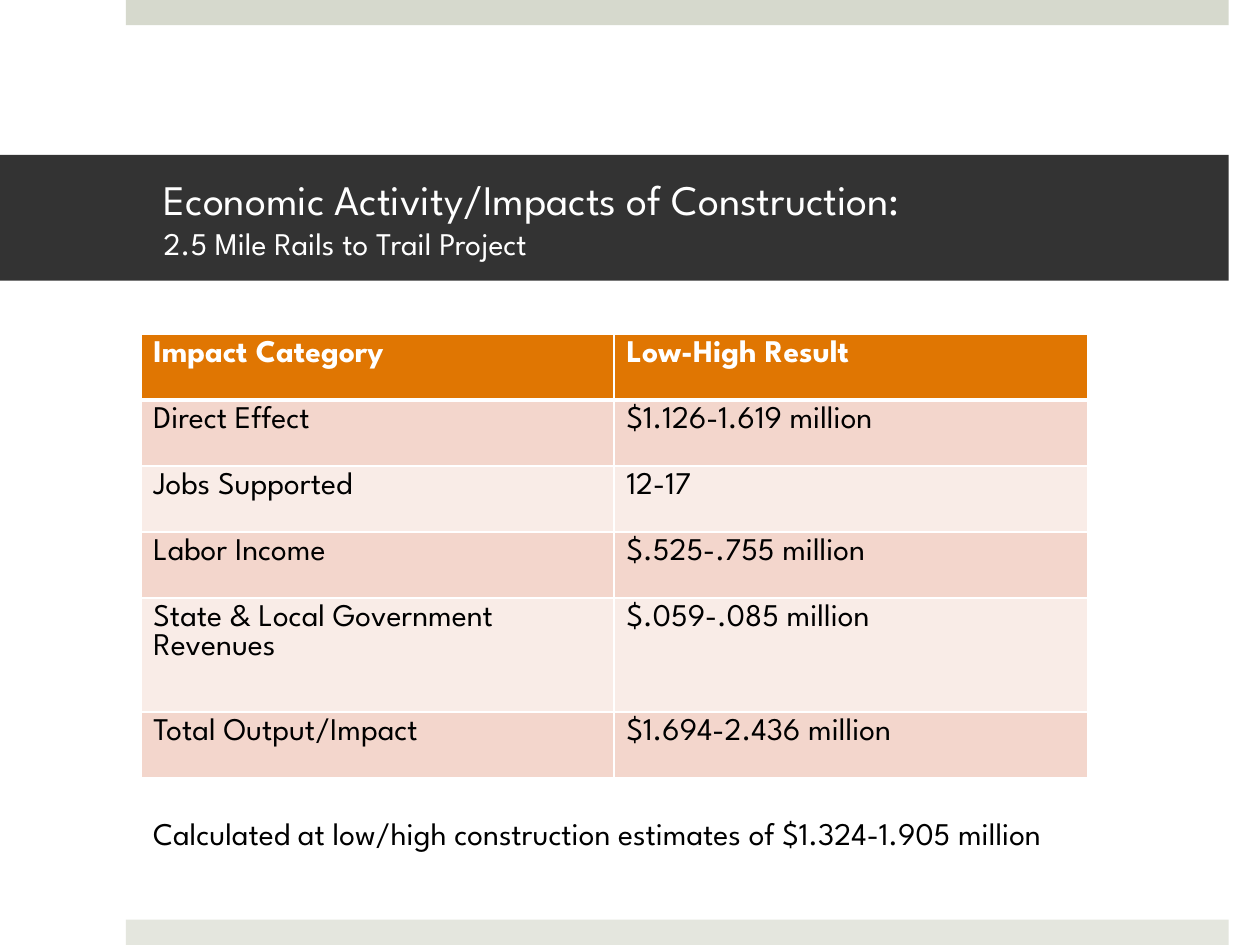
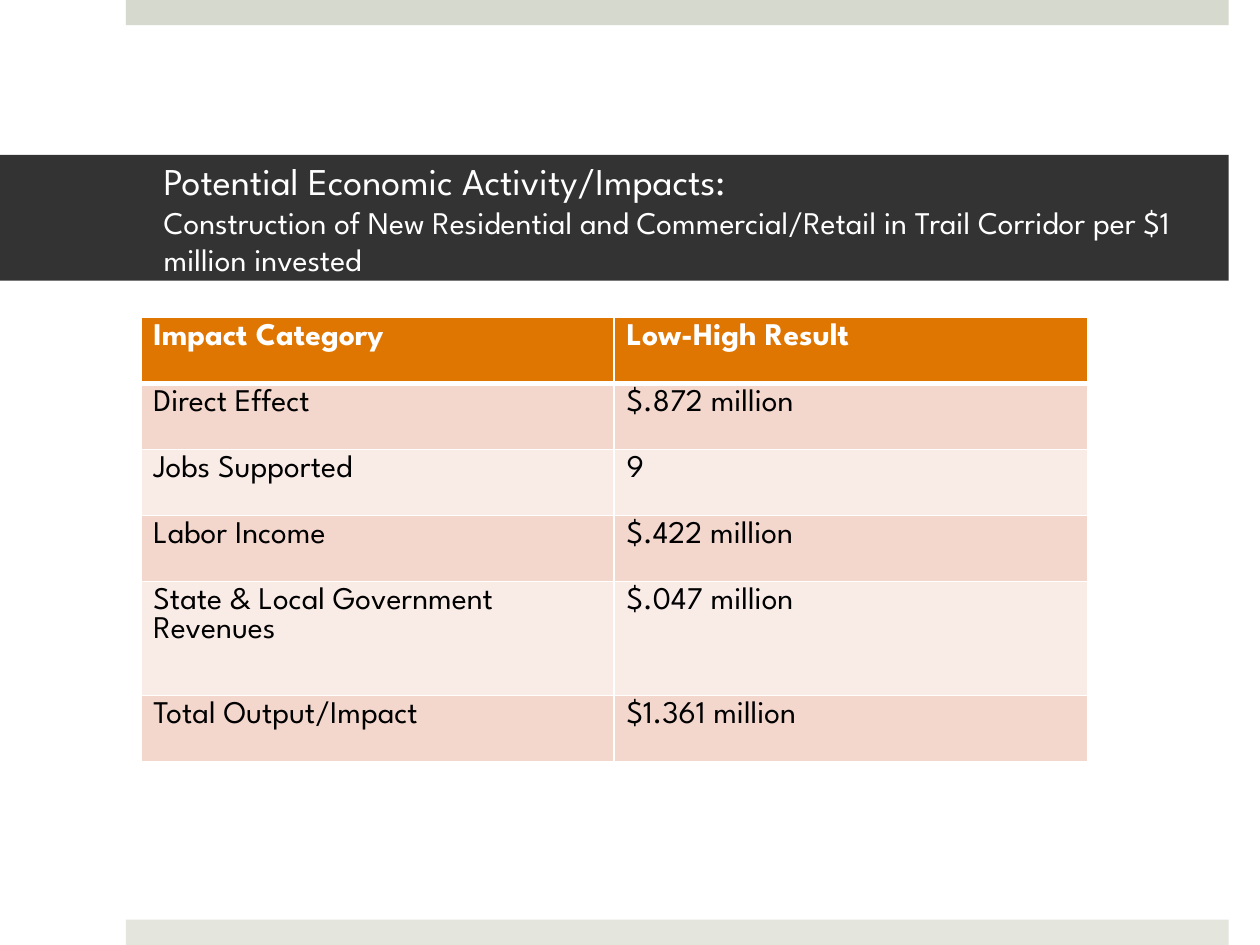
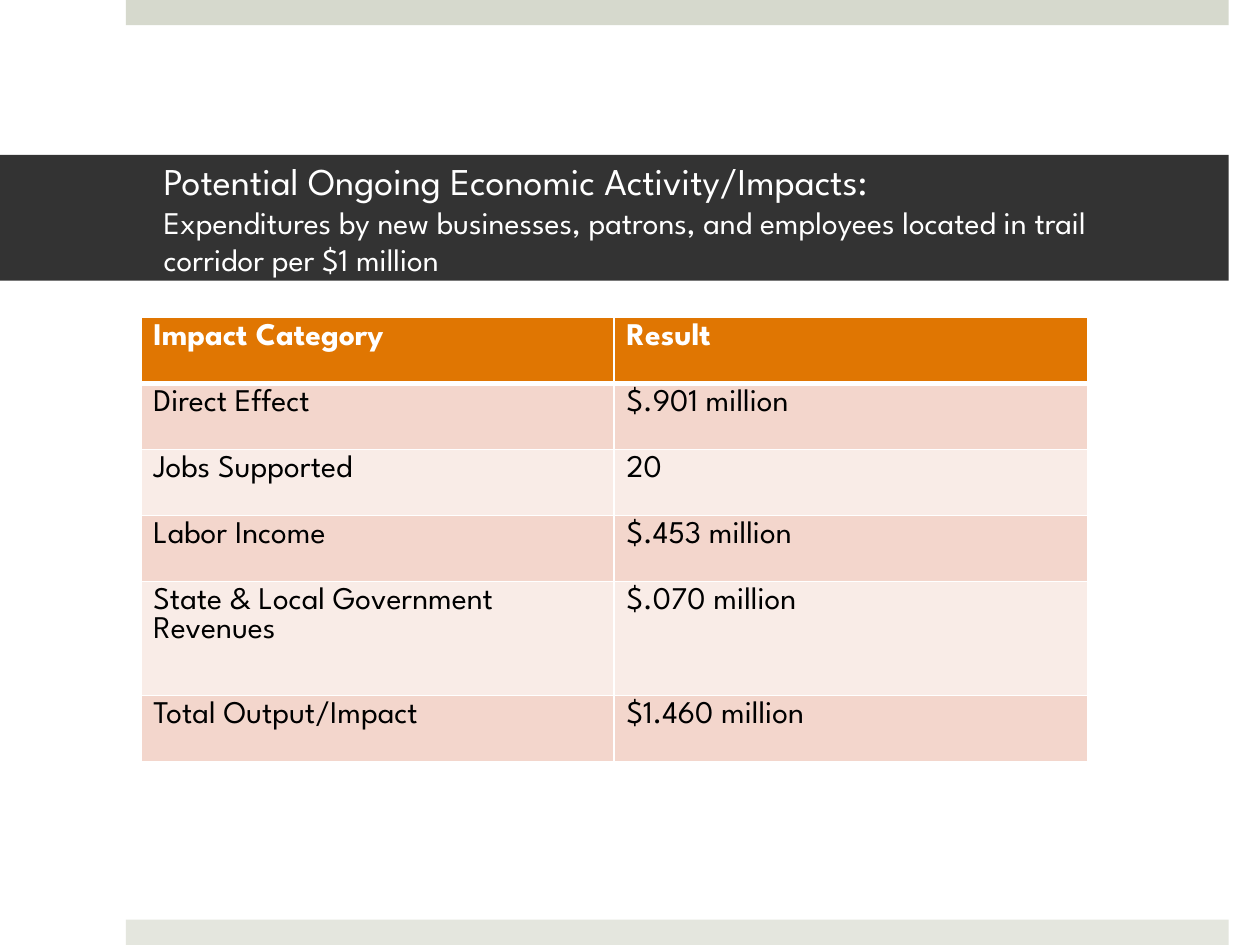
"""Build three slides on the economic impacts of a rail trail project."""
import copy

import lxml.etree
import pptx
import pptx.dml.color
import pptx.enum.shapes
import pptx.enum.text
import pptx.oxml.ns
import pptx.util

Cm, Pt = pptx.util.Cm, pptx.util.Pt
qn = pptx.oxml.ns.qn

COLORS = {
    "top_band": "D6D9CD",
    "bottom_band": "E4E6DE",
    "title_bar": "333333",
    "header": "E07602",
    "odd_row": "F3D6CC",
    "even_row": "F9ECE7",
    "white": "FFFFFF",
    "black": "000000",
}
FONT = "League Spartan"
BODY_SIZE = 18
SLIDE_WIDTH, SLIDE_HEIGHT = 25.4, 19.05
BAND_LEFT, BAND_HEIGHT, RIGHT_EDGE = 2.54, 0.51, 24.77
TABLE_LEFT, COLUMN_WIDTH = 2.84, 9.54
ROW_HEIGHTS = [1.33, 1.33, 1.33, 1.33, 2.3, 1.33]
CATEGORIES = [
    "Direct Effect",
    "Jobs Supported",
    "Labor Income",
    "State & Local Government Revenues",
    "Total Output/Impact",
]
IMPACTS = [
    {
        "heading": "Economic Activity/Impacts of Construction: ",
        "subheading": "2.5 Mile Rails to Trail Project",
        "heading_size": 24,
        "table_top": 6.73,
        "result_header": "Low-High Result",
        "results": ["$1.126-1.619 million", "12-17", "$.525-.755 million",
                    "$.059-.085 million", "$1.694-2.436 million"],
        "note": "Calculated at low/high construction estimates of $1.324-1.905 million",
    },
    {
        "heading": "Potential Economic Activity/Impacts: ",
        "subheading": "Construction of New Residential and Commercial/Retail "
                      "in Trail Corridor per $1 million invested",
        "heading_size": 21.6,
        "table_top": 6.4,
        "result_header": "Low-High Result",
        "results": ["$.872 million", "9", "$.422 million",
                    "$.047 million", "$1.361 million"],
    },
    {
        "heading": "Potential Ongoing Economic Activity/Impacts: ",
        "subheading": "Expenditures by new businesses, patrons, and employees "
                      "located in trail corridor per $1 million",
        "heading_size": 21.6,
        "table_top": 6.4,
        "result_header": "Result",
        "results": ["$.901 million", "20", "$.453 million",
                    "$.070 million", "$1.460 million"],
    },
]


def rgb(name):
    """Return the named colour."""
    return pptx.dml.color.RGBColor.from_string(COLORS[name])


def fill_solid(target, color):
    """Fill a shape or cell with the named colour."""
    target.fill.solid()
    target.fill.fore_color.rgb = rgb(color)


def format_run(run, color, size=BODY_SIZE, bold=False):
    """Apply the deck's font to a run."""
    run.font.name = FONT
    run.font.size = Pt(size)
    run.font.bold = bold
    run.font.color.rgb = rgb(color)


def add_layout_band(slide, top, color):
    """Draw a band and move it to the layout that all slides share."""
    band = slide.shapes.add_shape(
        pptx.enum.shapes.MSO_SHAPE.RECTANGLE,
        Cm(BAND_LEFT), Cm(top), Cm(RIGHT_EDGE - BAND_LEFT), Cm(BAND_HEIGHT))
    band.shadow.inherit = False
    fill_solid(band, color)
    band.line.fill.background()
    slide.slide_layout.shapes._spTree.insert(2, band._element)


def set_title(slide, heading, subheading, heading_size):
    """Style the title as a dark bar with a heading and a subheading."""
    title = slide.shapes.title
    title.left, title.top = Cm(0), Cm(3.12)
    title.width, title.height = Cm(RIGHT_EDGE), Cm(2.54)
    fill_solid(title, "title_bar")
    frame = title.text_frame
    frame.text = f"{heading}\v{subheading}"
    frame.word_wrap = True
    frame.auto_size = pptx.enum.text.MSO_AUTO_SIZE.NONE
    frame.vertical_anchor = pptx.enum.text.MSO_ANCHOR.MIDDLE
    frame.margin_left, frame.margin_right = Cm(3.3), Cm(0.76)
    frame.margin_top = frame.margin_bottom = Cm(0.13)
    paragraph = frame.paragraphs[0]
    paragraph.alignment = pptx.enum.text.PP_ALIGN.LEFT
    for run, size in zip(paragraph.runs, (heading_size, BODY_SIZE)):
        format_run(run, "white", size)
    line_break = paragraph._p.find(qn("a:br"))
    line_break.insert(0, copy.deepcopy(paragraph.runs[0]._r.rPr))


def set_borders(cell, top=1, bottom=1):
    """Give a cell white borders with the given widths in points."""
    properties = cell._tc.get_or_add_tcPr()
    widths = {"a:lnL": 1, "a:lnR": 1, "a:lnT": top, "a:lnB": bottom}
    for position, (side, width) in enumerate(widths.items()):
        border = lxml.etree.Element(qn(side), w=str(Pt(width)))
        fill = lxml.etree.SubElement(border, qn("a:solidFill"))
        lxml.etree.SubElement(fill, qn("a:srgbClr"), val=COLORS["white"])
        properties.insert(position, border)


def add_impact_table(slide, top, result_header, results):
    """Add the table of impact categories and their results."""
    rows = [("Impact Category", result_header), *zip(CATEGORIES, results)]
    table = slide.shapes.add_table(
        len(rows), 2, Cm(TABLE_LEFT), Cm(top),
        Cm(2 * COLUMN_WIDTH), Cm(sum(ROW_HEIGHTS))).table
    for column in table.columns:
        column.width = Cm(COLUMN_WIDTH)
    for index, (texts, height) in enumerate(zip(rows, ROW_HEIGHTS)):
        is_header = index == 0
        row_color = "header" if is_header else "odd_row" if index % 2 else "even_row"
        table.rows[index].height = Cm(height)
        for cell, text in zip(table.rows[index].cells, texts):
            cell.text_frame.text = text
            format_run(cell.text_frame.paragraphs[0].runs[0],
                       "white" if is_header else "black", bold=is_header)
            fill_solid(cell, row_color)
            set_borders(cell, top=3 if index == 1 else 1, bottom=3 if is_header else 1)


def add_note(slide, text):
    """Add a note below the table."""
    note = slide.shapes.add_textbox(
        Cm(TABLE_LEFT), Cm(16.28), Cm(2 * COLUMN_WIDTH), Cm(1.8)).text_frame
    note.word_wrap = True
    note.auto_size = pptx.enum.text.MSO_AUTO_SIZE.SHAPE_TO_FIT_TEXT
    note.text = text
    format_run(note.paragraphs[0].runs[0], "black")


def main():
    """Build and save the presentation."""
    deck = pptx.Presentation()
    deck.slide_width, deck.slide_height = Cm(SLIDE_WIDTH), Cm(SLIDE_HEIGHT)
    title_only = deck.slide_layouts[5]
    for impact in IMPACTS:
        slide = deck.slides.add_slide(title_only)
        set_title(slide, impact["heading"], impact["subheading"], impact["heading_size"])
        add_impact_table(slide, impact["table_top"], impact["result_header"], impact["results"])
        if "note" in impact:
            add_note(slide, impact["note"])
    add_layout_band(deck.slides[0], 0, "top_band")
    add_layout_band(deck.slides[0], SLIDE_HEIGHT - BAND_HEIGHT, "bottom_band")
    deck.save("out.pptx")


if __name__ == "__main__":
    main()
